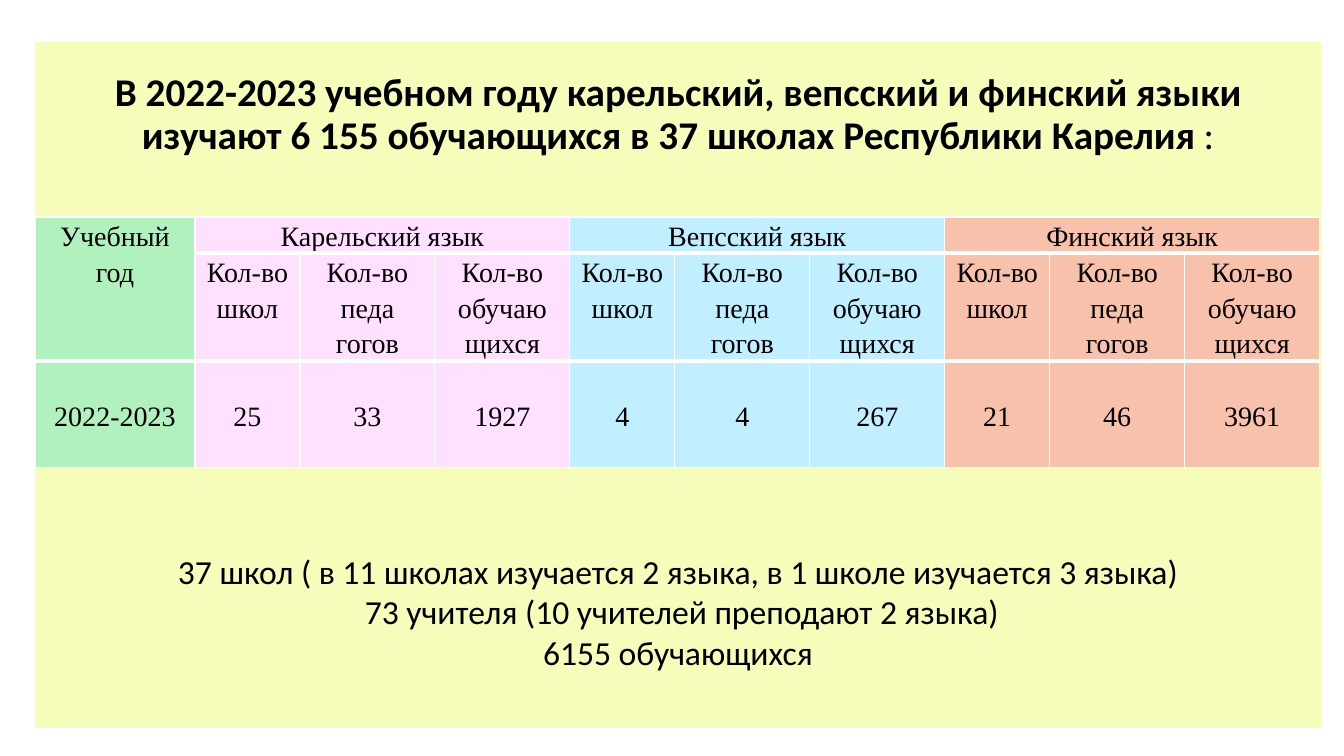
"""Build the slide on pupils learning Karelian, Veps and Finnish in 2022-2023."""
from lxml import etree
from pptx import Presentation
from pptx import util as u
from pptx.dml.color import RGBColor
from pptx.enum import shapes, text
from pptx.oxml.ns import qn

THEME = {
    "panel": "F6FCBA", "year": "B1F1BD", "ink": "000000", "border": "FFFFFF",
    "body_font": "Calibri", "table_font": "Times New Roman",
    "title_size": 28, "summary_size": 24, "table_size": 20,
    "thin": 1, "thick": 3,
}
LANGUAGES = [
    ("Карельский язык", "FFE1FF", (25, 33, 1927)),
    ("Вепсский язык", "C1EFFF", (4, 4, 267)),
    ("Финский язык", "F7C1AB", (21, 46, 3961)),
]
MEASURES = ["Кол-во школ", "Кол-во педа\nгогов", "Кол-во\nобучаю\nщихся"]
YEAR_WIDTH, MEASURE_WIDTHS = 160, [105, 135, 135]
ROW_HEIGHTS = [35, 108, 107]
LEFT, WIDTH = 35, 1286


def px(count):
    return u.Emu(round(count * 914400 / 100.8))


def write(frame, words, font, size, spacing=1.0):
    frame.word_wrap = True
    frame.text = words
    for paragraph in frame.paragraphs:
        paragraph.alignment = text.PP_ALIGN.CENTER
        paragraph.line_spacing = spacing
        for run in paragraph.runs:
            run.font.name = font
            run.font.size = u.Pt(size)
            run.font.color.rgb = RGBColor.from_string(THEME["ink"])


prs = Presentation()
prs.slide_width, prs.slide_height = px(1344), px(756)
slide = prs.slides.add_slide(prs.slide_layouts[6])

panel = slide.shapes.add_shape(shapes.MSO_SHAPE.RECTANGLE, px(LEFT), px(42), px(WIDTH), px(686))
panel.shadow.inherit = False
panel.fill.solid()
panel.fill.fore_color.rgb = RGBColor.from_string(THEME["panel"])
panel.line.fill.background()
title = panel.text_frame
title.vertical_anchor = text.MSO_ANCHOR.TOP
title.margin_top = px(31)
write(title, "В 2022-2023 учебном году карельский, вепсский и финский языки "
      "изучают 6 155 обучающихся в 37 школах Республики Карелия ",
      THEME["body_font"], THEME["title_size"], 0.9)
headline = title.paragraphs[0].runs[0]
headline.font.bold = True
colon = title.paragraphs[0].add_run()
colon.text = ":"
colon.font.name = THEME["body_font"]
colon.font.size = u.Pt(THEME["title_size"])
colon.font.color.rgb = RGBColor.from_string(THEME["ink"])

rows = [["Учебный год"], [""], ["2022-2023"]]
fills = [THEME["year"]]
for language, color, counts in LANGUAGES:
    rows[0] += [language, "", ""]
    rows[1] += MEASURES
    rows[2] += [str(count) for count in counts]
    fills += [color] * len(MEASURES)

statistics = slide.shapes.add_table(
    len(rows), len(fills), px(LEFT), px(217), px(WIDTH), px(sum(ROW_HEIGHTS))).table
for column, width in zip(statistics.columns, [YEAR_WIDTH] + MEASURE_WIDTHS * len(LANGUAGES)):
    column.width = px(width)
for row, height in zip(statistics.rows, ROW_HEIGHTS):
    row.height = px(height)

statistics.cell(0, 0).merge(statistics.cell(1, 0))
for first in range(1, len(fills), len(MEASURES)):
    statistics.cell(0, first).merge(statistics.cell(0, first + len(MEASURES) - 1))

for r, words in enumerate(rows):
    for c, color in enumerate(fills):
        cell = statistics.cell(r, c)
        cell.margin_left = cell.margin_right = px(7)
        cell.margin_top = cell.margin_bottom = 0
        is_counts = r == len(rows) - 1
        cell.vertical_anchor = text.MSO_ANCHOR.MIDDLE if is_counts else text.MSO_ANCHOR.TOP
        cell.fill.solid()
        cell.fill.fore_color.rgb = RGBColor.from_string(color)
        if not cell.is_spanned:
            write(cell.text_frame, words[c], THEME["table_font"], THEME["table_size"], 1.15)
        borders = {
            "a:lnL": THEME["thin"], "a:lnR": THEME["thin"],
            "a:lnT": THEME["thick"] if r else THEME["thin"],
            "a:lnB": THEME["thin"] if is_counts else THEME["thick"],
        }
        properties = cell._tc.get_or_add_tcPr()
        for position, (side, points) in enumerate(borders.items()):
            edge = etree.Element(qn(side), w=str(u.Pt(points)))
            paint = etree.SubElement(edge, qn("a:solidFill"))
            etree.SubElement(paint, qn("a:srgbClr"), val=THEME["border"])
            properties.insert(position, edge)

summary = slide.shapes.add_textbox(px(LEFT), px(546), px(WIDTH), px(163)).text_frame
write(summary, "37 школ ( в 11 школах изучается 2 языка, в 1 школе изучается 3 языка)\n"
      " 73 учителя (10 учителей преподают 2 языка)\n"
      "6155 обучающихся", THEME["body_font"], THEME["summary_size"])

prs.save("out.pptx")
